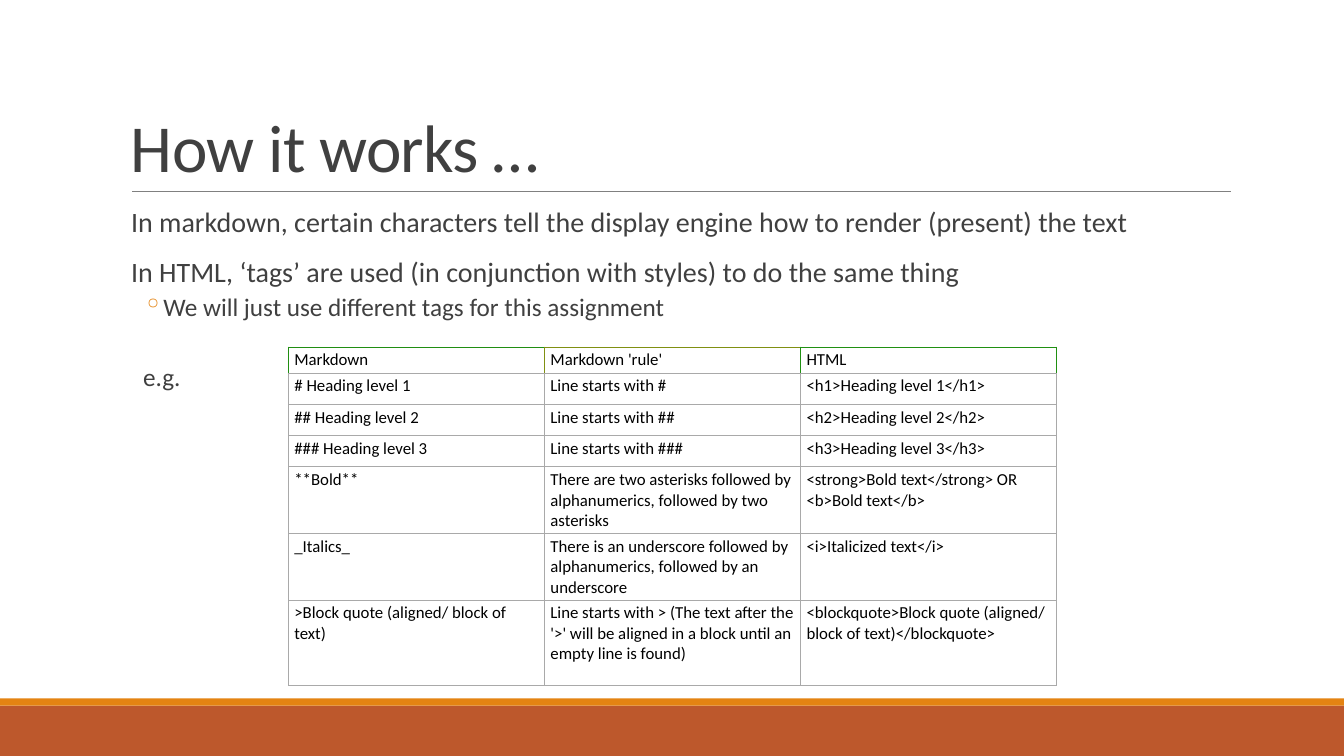
from lxml import etree
from pptx import Presentation
from pptx.dml.color import RGBColor
from pptx.enum.shapes import MSO_CONNECTOR, MSO_SHAPE
from pptx.enum.text import MSO_ANCHOR
from pptx.oxml.ns import qn
from pptx.util import Inches, Pt

LINE = MSO_CONNECTOR.STRAIGHT
RECT = MSO_SHAPE.RECTANGLE
TOP, BOTTOM = MSO_ANCHOR.TOP, MSO_ANCHOR.BOTTOM
INK, GRAY, ORANGE = "404040", "A9A9A9", "E48312"


def color(code):
    return RGBColor.from_string(code)


def write(para, text, size, code, **form):
    """Fill a paragraph with one run and set its paragraph format."""
    run = para.add_run()
    run.text = text
    run.font.name, run.font.size = "Calibri", Pt(size)
    run.font.color.rgb = color(code)
    for name, value in form.items():
        setattr(para, name, value)
    return run


deck = Presentation()
deck.slide_width, deck.slide_height = Inches(13.33), Inches(7.5)
slide = deck.slides.add_slide(deck.slide_layouts[6])
shapes = slide.shapes

# Footer bands and title rule
for top, height, code in ((7, 0.5, "BD582C"), (6.93, 0.07, ORANGE)):
    band = shapes.add_shape(RECT, 0, Inches(top), Inches(13.33), Inches(height))
    band.shadow.inherit = False
    band.fill.solid()
    band.fill.fore_color.rgb = color(code)
    band.line.fill.background()

rule = shapes.add_connector(LINE, Inches(1.31), Inches(1.9), Inches(12.21), Inches(1.9))
rule.line.color.rgb = color("808080")
rule.line.width = Pt(0.5)
etree.SubElement(rule._element.spPr, qn("a:effectLst"))

# Title and body
frames = []
for top, height, anchor, side in ((0.31, 1.59, BOTTOM, 0.1), (2.02, 4.4, TOP, 0)):
    box = shapes.add_textbox(Inches(1.2), Inches(top), Inches(11), Inches(height))
    frame = box.text_frame
    frame.word_wrap = True
    frame.vertical_anchor = anchor
    frame.margin_left = frame.margin_right = Inches(side)
    frames.append(frame)
title, body = frames

run = write(title.paragraphs[0], "How it works …", 48, INK, line_spacing=0.85)
run.font._element.set("spc", "-50")

# text, size, space before, space after, left margin, first-line indent, bullet
points = [
    ("In markdown, certain characters tell the display engine how to render (present) the text",
     20, 12, 2, 0.1, 0, None),
    ("In HTML, ‘tags’ are used (in conjunction with styles) to do the same thing",
     20, 12, 2, 0.1, 0, None),
    ("We will just use different tags for this assignment", 18, 2, 4, 0.42, -0.2, "◦"),
    ("e.g.", 18, 27, 4, 0.22, 0, None),
]
for i, (text, size, before, after, left, indent, bullet) in enumerate(points):
    para = body.add_paragraph() if i else body.paragraphs[0]
    write(para, text, size, INK, line_spacing=0.9,
          space_before=Pt(before), space_after=Pt(after))
    props = para._p.get_or_add_pPr()
    props.set("marL", str(Inches(left)))
    props.set("indent", str(Inches(indent)))
    if bullet:
        tint = etree.SubElement(props, qn("a:buClr"))
        etree.SubElement(tint, qn("a:srgbClr"), val=ORANGE)
        etree.SubElement(props, qn("a:buChar"), char=bullet)

# Table of markdown rules
rows = [
    ("Markdown", "Markdown 'rule'", "HTML"),
    *((f"{'#' * n} Heading level {n}", f"Line starts with {'#' * n}",
       f"<h{n}>Heading level {n}</h{n}>") for n in (1, 2, 3)),
    ("**Bold**",
     "There are two asterisks followed by alphanumerics, followed by two asterisks",
     "<strong>Bold text</strong> OR <b>Bold text</b>"),
    ("_Italics_",
     "There is an underscore followed by alphanumerics, followed by an underscore",
     "<i>Italicized text</i>"),
    (">Block quote (aligned/ block of text)",
     "Line starts with > (The text after the '>' will be aligned in a block until an "
     "empty line is found)",
     "<blockquote>Block quote (aligned/ block of text)</blockquote>"),
]
heights = [0.26, 0.31, 0.31, 0.31, 0.66, 0.66, 0.85]
edges = ["208E12", "809012", "209012", "209012"]
margins = {"margin_left": 0.06, "margin_right": 0.06,
           "margin_top": 0.03, "margin_bottom": 0.03}

table = shapes.add_table(len(rows), 3, Inches(2.86), Inches(3.44),
                         Inches(7.62), Inches(sum(heights))).table
for col in table.columns:
    col.width = Inches(2.54)
for r, texts in enumerate(rows):
    table.rows[r].height = Inches(heights[r])
    for c, text in enumerate(texts):
        cell = table.cell(r, c)
        for name, value in margins.items():
            setattr(cell, name, Inches(value))
        cell.fill.solid()
        cell.fill.fore_color.rgb = color("FFFFFF")
        write(cell.text_frame.paragraphs[0], text, 12, "000000")
        left, right = (GRAY, GRAY) if r else edges[c:c + 2]
        sides = {"lnL": left, "lnR": right, "lnT": left, "lnB": GRAY}
        props = cell._tc.get_or_add_tcPr()
        for i, (side, code) in enumerate(sides.items()):
            line = etree.Element(qn(f"a:{side}"), w=str(Pt(0.43)))
            fill = etree.SubElement(line, qn("a:solidFill"))
            etree.SubElement(fill, qn("a:srgbClr"), val=code)
            props.insert(i, line)

deck.save("out.pptx")
